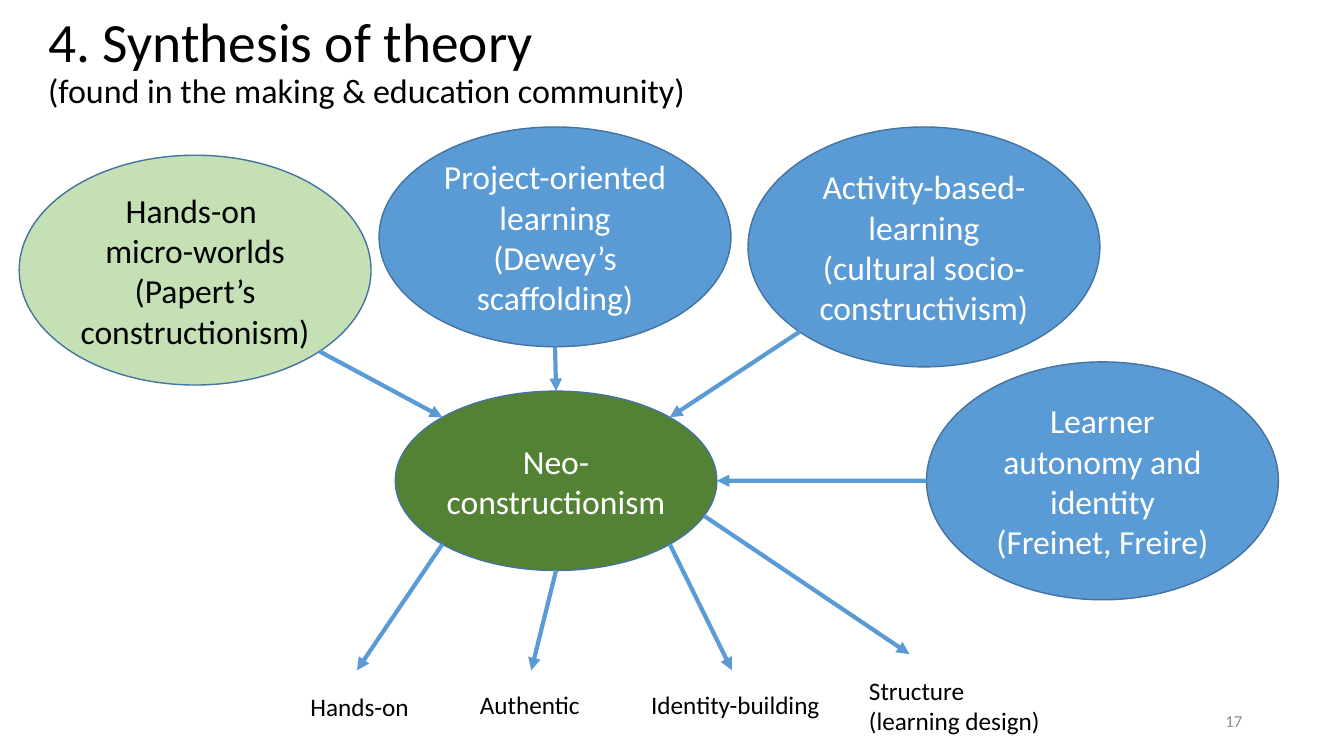
import math
import lxml.etree
import pptx
import pptx.util
import pptx.dml.color
import pptx.enum.shapes
import pptx.enum.text
import pptx.oxml.ns

WIDE, HIGH = 13.33, 7.5
FONT = "Calibri"
INK = {"black": "000000", "white": "FFFFFF", "grey": "8C8C8C", "blue": "5B9BD5",
       "edge": "43739E", "pale": "C5E0B4", "green": "548235"}

# Places are percentages of the slide: left, top, width, height.
TITLE = ((2.85, 1.73, 93.17, 13.07),
         [("4. Synthesis of theory\n", 39.6), ("(found in the making & education community)", 24.3)])
OVAL = 26.18
OVALS = {
    "neo": ((29.41, 51.73, 23.93, 23.73), "green", "white", ["Neo-constructionism"]),
    "hands": ((1.43, 20.53, OVAL, 30.4), "pale", "black",
              ["Hands-on \nmicro-worlds", "(Papert’s constructionism)"]),
    "project": ((28.21, 16.8, OVAL, 29.07), "blue", "white",
                ["Project-oriented learning", "(Dewey’s scaffolding)"]),
    "active": ((55.66, 16.8, OVAL, 31.73), "blue", "white",
               ["Activity-based-learning", "(cultural socio-constructivism)"]),
    "learner": ((68.94, 47.87, OVAL, 31.47), "blue", "white",
                ["Learner autonomy and identity", "(Freinet, Freire)"]),
}
INFLOW = [("hands", 45, 225), ("project", 90, 270), ("active", 135, 315), ("learner", 180, 0)]
OUTFLOW = [(135, (26.56, 88.67)), (90, (39.53, 88.67)), (45, (54.46, 88.67)), (23, (67.67, 86.53))]
LABELS = [
    ((22.36, 90.8, 8.93, 5.33), "Hands-on"),
    ((34.96, 90.53, 9, 5.33), "Authentic"),
    ((47.71, 90.53, 14.25, 5.33), "Identity-building"),
    ((63.92, 88.67, 14.4, 9.47), "Structure\n(learning design)"),
]
NUMBER = ((70.67, 92.67, 22.51, 5.33), "17")

ALIGN = pptx.enum.text.PP_ALIGN
MIDDLE = pptx.enum.text.MSO_ANCHOR.MIDDLE
KIND = pptx.enum.shapes

deck = pptx.Presentation()
deck.slide_width = pptx.util.Inches(WIDE)
deck.slide_height = pptx.util.Inches(HIGH)
slide = deck.slides.add_slide(deck.slide_layouts[6])


def across(share):
    return pptx.util.Inches(WIDE * share / 100)


def down(share):
    return pptx.util.Inches(HIGH * share / 100)


def place(box):
    left, top, width, height = box
    return across(left), down(top), across(width), down(height)


def color(name):
    return pptx.dml.color.RGBColor.from_string(INK[name])


def write(para, text, size, ink):
    for i, part in enumerate(text.split("\n")):
        if i:
            para.add_line_break()
        if part:
            run = para.add_run()
            run.text = part
            run.font.name = FONT
            run.font.size = pptx.util.Pt(size)
            run.font.color.rgb = color(ink)


def add_text(box, runs, ink="black", wrap=True, align=ALIGN.LEFT):
    frame = slide.shapes.add_textbox(*place(box)).text_frame
    frame.word_wrap = wrap
    if wrap:
        frame.vertical_anchor = MIDDLE
    para = frame.paragraphs[0]
    para.alignment = align
    for text, size in runs:
        write(para, text, size, ink)
    return para


def add_oval(box, fill, ink, lines):
    oval = slide.shapes.add_shape(KIND.MSO_SHAPE.OVAL, *place(box))
    oval.shadow.inherit = False
    oval.fill.solid()
    oval.fill.fore_color.rgb = color(fill)
    oval.line.color.rgb = color("edge")
    oval.line.width = pptx.util.Pt(1)
    frame = oval.text_frame
    frame.word_wrap = True
    frame.vertical_anchor = MIDDLE
    for side in ("left", "top", "right", "bottom"):
        setattr(frame, "margin_" + side, pptx.util.Inches(0.04))
    for i, text in enumerate(lines):
        para = frame.add_paragraph() if i else frame.paragraphs[0]
        para.alignment = ALIGN.CENTER
        write(para, text, 24, ink)


def rim(name, angle):
    left, top, width, height = OVALS[name][0]
    turn = math.radians(angle)
    return (left + width / 2 * (1 + math.cos(turn)),
            top + height / 2 * (1 + math.sin(turn)))


def add_arrow(start, end):
    line = slide.shapes.add_connector(
        KIND.MSO_CONNECTOR.STRAIGHT,
        across(start[0]), down(start[1]), across(end[0]), down(end[1]))
    line.line.color.rgb = color("blue")
    line.line.width = pptx.util.Pt(3)
    tag = pptx.oxml.ns.qn
    lxml.etree.SubElement(line.line._get_or_add_ln(), tag("a:tailEnd"), type="triangle")
    lxml.etree.SubElement(line._element.spPr, tag("a:effectLst"))


add_text(*TITLE).line_spacing = 0.9
for oval in OVALS.values():
    add_oval(*oval)
for name, leave, reach in INFLOW:
    add_arrow(rim(name, leave), rim("neo", reach))
for leave, end in OUTFLOW:
    add_arrow(rim("neo", leave), end)
for box, text in LABELS:
    add_text(box, [(text, 18)], wrap=False)
add_text(NUMBER[0], [(NUMBER[1], 12)], "grey", align=ALIGN.RIGHT)

deck.save("out.pptx")
